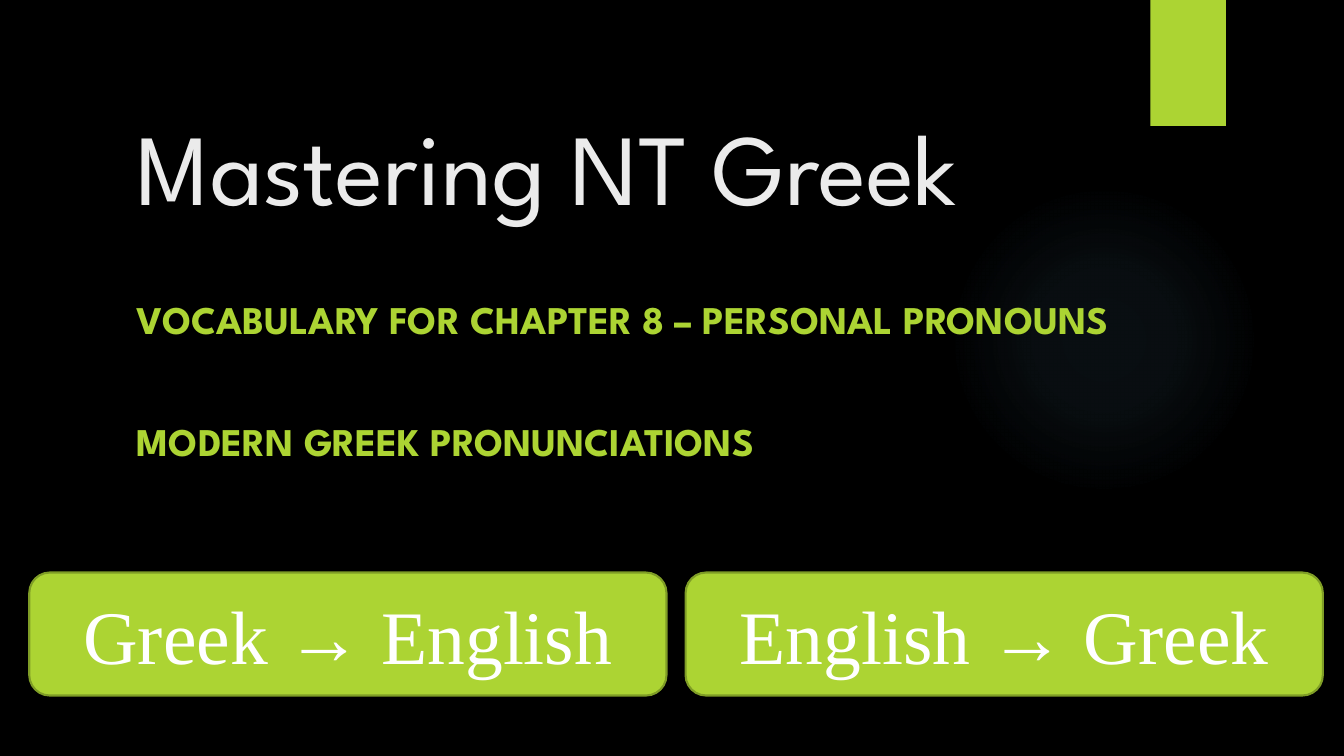
from lxml import etree
from pptx import Presentation
from pptx.dml.color import RGBColor
from pptx.enum.shapes import MSO_SHAPE
from pptx.enum.text import MSO_ANCHOR, PP_ALIGN
from pptx.oxml.ns import nsdecls
from pptx.util import Inches, Pt

BLACK = RGBColor(0x00, 0x00, 0x00)
WHITE = RGBColor(0xFF, 0xFF, 0xFF)
OFF_WHITE = RGBColor(0xEB, 0xEB, 0xEB)
LIME = RGBColor(0xAC, 0xD4, 0x33)
DARK_LIME = RGBColor(0x7F, 0x9D, 0x26)
GLOW_BLUE = RGBColor(0x7A, 0xC4, 0xF0)

ELLIPSE, RECTANGLE = MSO_SHAPE.OVAL, MSO_SHAPE.RECTANGLE
ROUNDED = MSO_SHAPE.ROUNDED_RECTANGLE
TOP, MIDDLE, BOTTOM = MSO_ANCHOR.TOP, MSO_ANCHOR.MIDDLE, MSO_ANCHOR.BOTTOM
LEFT, CENTER = PP_ALIGN.LEFT, PP_ALIGN.CENTER

HEADING_FONT = "League Spartan"
BUTTON_FONT = "Times New Roman"
GLOW_STOPS = [(0, 7), (36, 6), (69, 0), (100, 0)]  # position, opacity in percent


def add_plain_shape(slide, kind, box, fill=None, line=None):
    shape = slide.shapes.add_shape(kind, *map(Inches, box))
    shape.shadow.inherit = False
    if fill is None:
        shape.fill.background()
    else:
        shape.fill.solid()
        shape.fill.fore_color.rgb = fill
    if line is None:
        shape.line.fill.background()
    else:
        shape.line.color.rgb = line
        shape.line.width = Pt(1.5)
    return shape


def write_text(shape, lines, *, font, size, color, bold=False, align=LEFT,
               anchor=TOP, line_spacing=None, gap=0):
    frame = shape.text_frame
    frame.word_wrap = True
    frame.vertical_anchor = anchor
    for index, line in enumerate(lines):
        paragraph = frame.add_paragraph() if index else frame.paragraphs[0]
        paragraph.alignment = align
        paragraph.line_spacing = line_spacing
        if index:
            paragraph.space_before = Pt(gap)
        run = paragraph.add_run()
        run.text = line
        run.font.name = font
        run.font.size = Pt(size)
        run.font.bold = bold
        run.font.color.rgb = color


def add_glow(slide, box):
    glow = add_plain_shape(slide, ELLIPSE, box)
    stops = "".join(
        f'<a:gs pos="{position * 1000}"><a:srgbClr val="{GLOW_BLUE}">'
        f'<a:alpha val="{opacity * 1000}"/></a:srgbClr></a:gs>'
        for position, opacity in GLOW_STOPS)
    gradient = etree.fromstring(
        f'<a:gradFill {nsdecls("a")} rotWithShape="1"><a:gsLst>{stops}</a:gsLst>'
        '<a:path path="circle"><a:fillToRect l="50000" t="50000" r="50000" '
        'b="50000"/></a:path></a:gradFill>')
    properties = glow.element.spPr
    properties.replace(properties.find("{*}noFill"), gradient)


def add_background(slide):
    slide.background.fill.solid()
    slide.background.fill.fore_color.rgb = BLACK
    add_glow(slide, (9.41, 1.83, 3.08, 3.08))
    add_plain_shape(slide, RECTANGLE, (11.41, 0, 0.75, 1.25), LIME)


def add_headings(slide, left, top):
    title = slide.shapes.add_textbox(*map(Inches, (left, top, 10.04, 1.59)))
    write_text(title, ["Mastering NT Greek"], font=HEADING_FONT, size=72,
               color=OFF_WHITE, anchor=BOTTOM)
    subtitle = slide.shapes.add_textbox(
        *map(Inches, (left, top + 2.18, 10.73, 2.69)))
    write_text(subtitle, ["VOCABULARY FOR CHAPTER 8 – PERSONAL PRONOUNS",
                          "MODERN GREEK PRONUNCIATIONS"],
               font=HEADING_FONT, size=28, color=LIME, bold=True,
               line_spacing=Pt(34), gap=53)


def add_buttons(slide, left, top, width, height, gap):
    labels = ["Greek → English", "English → Greek"]
    for index, label in enumerate(labels):
        box = (left + index * (width + gap), top, width, height)
        button = add_plain_shape(slide, ROUNDED, box, LIME, DARK_LIME)
        write_text(button, [label], font=BUTTON_FONT, size=54, color=WHITE,
                   align=CENTER, anchor=MIDDLE)


def main():
    presentation = Presentation()
    presentation.slide_width = Inches(13.33)
    presentation.slide_height = Inches(7.5)
    slide = presentation.slides.add_slide(presentation.slide_layouts[6])
    add_background(slide)
    add_headings(slide, 1.26, 0.7)
    add_buttons(slide, 0.29, 5.68, 6.32, 1.22, 0.19)
    presentation.save("out.pptx")


if __name__ == "__main__":
    main()
